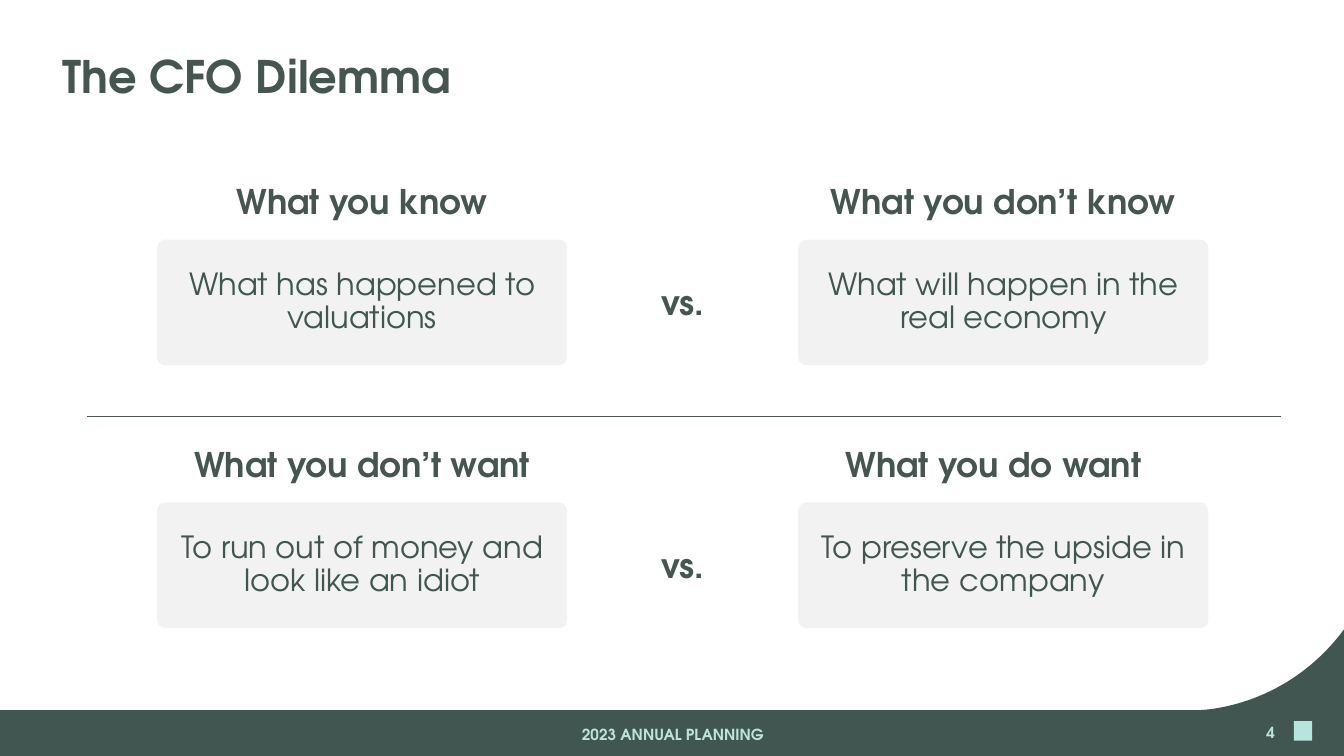
from dataclasses import dataclass

from lxml.etree import SubElement
from pptx import Presentation
from pptx.dml.color import RGBColor
from pptx.enum.shapes import MSO_CONNECTOR, MSO_SHAPE
from pptx.enum.text import MSO_ANCHOR, PP_ALIGN
from pptx.oxml.ns import qn
from pptx.shapes.autoshape import Shape
from pptx.slide import Slide
from pptx.util import Emu, Pt

PX = 9144  # EMU per px, 100 px to the inch
FONT = "TeX Gyre Adventor"
GREEN = RGBColor(0x41, 0x56, 0x51)
HEADING = RGBColor(0x45, 0x55, 0x50)
BODY = RGBColor(0x40, 0x56, 0x50)
MINT = RGBColor(0xBF, 0xE3, 0xDC)
MARK = RGBColor(0xB5, 0xE5, 0xDC)
GREY = RGBColor(0xF2, 0xF2, 0xF2)

SLIDE_W, SLIDE_H = 2199, 1237
CARD_W, CARD_H = 671, 206
COLUMNS = (257, 1306)
ROWS = (392, 822)
HEADING_W, HEADING_H, HEADING_RISE = 597, 77, 101
VS_LEFT, VS_W, VS_DROP = 1035, 165, 64
CURVE_STEPS = 32


@dataclass(frozen=True)
class TextStyle:
    size: float
    color: RGBColor
    bold: bool = True
    align: PP_ALIGN = PP_ALIGN.CENTER
    anchor: MSO_ANCHOR = MSO_ANCHOR.MIDDLE
    spacing: float = 1.0
    inset_left: int = 10
    inset_right: int = 10


@dataclass(frozen=True)
class Card:
    column: int
    row: int
    heading: str
    body: str
    heading_shift: int = 0


TITLE = TextStyle(52.8, HEADING, align=PP_ALIGN.LEFT, spacing=0.9, inset_left=0)
CARD_HEADING = TextStyle(40, HEADING, anchor=MSO_ANCHOR.TOP)
CARD_BODY = TextStyle(36, BODY, bold=False, spacing=0.9, inset_left=23, inset_right=23)
FOOTER = TextStyle(18, MINT)
PAGE_NUMBER = TextStyle(18, MINT, align=PP_ALIGN.RIGHT)

CARDS = (
    Card(0, 0, "What you know", "What has happened to valuations"),
    Card(1, 0, "What you don’t know", "What will happen in the real economy"),
    Card(0, 1, "What you don’t want", "To run out of money and look like an idiot"),
    Card(1, 1, "What you do want", "To preserve the upside in the company", -16),
)


def px(*values: int) -> list[Emu]:
    return [Emu(value * PX) for value in values]


def write(sp: Shape, text: str, style: TextStyle) -> None:
    tf = sp.text_frame
    tf.word_wrap = True
    tf.vertical_anchor = style.anchor
    tf.margin_left, tf.margin_right = px(style.inset_left, style.inset_right)
    tf.margin_top, tf.margin_bottom = px(5, 5)
    p = tf.paragraphs[0]
    p.text = text
    p.alignment = style.align
    p.line_spacing = style.spacing
    p.font.name = FONT
    p.font.size = Pt(style.size)
    p.font.bold = style.bold
    p.font.color.rgb = style.color


def add_text(s: Slide, left: int, top: int, width: int, height: int,
             text: str, style: TextStyle) -> None:
    write(s.shapes.add_textbox(*px(left, top, width, height)), text, style)


def paint(sp: Shape, color: RGBColor) -> None:
    sp.shadow.inherit = False
    sp.fill.solid()
    sp.fill.fore_color.rgb = color
    sp.line.fill.background()


def add_card(s: Slide, card: Card) -> None:
    left, top = COLUMNS[card.column], ROWS[card.row]
    sp = s.shapes.add_shape(MSO_SHAPE.ROUNDED_RECTANGLE, *px(left, top, CARD_W, CARD_H))
    sp.adjustments[0] = 0.066
    paint(sp, GREY)
    write(sp, card.body, CARD_BODY)
    heading_left = left + (CARD_W - HEADING_W) // 2 + card.heading_shift
    add_text(s, heading_left, top - HEADING_RISE, HEADING_W, HEADING_H,
             card.heading, CARD_HEADING)


def curve_point(t: float) -> tuple[int, int]:
    """Point in EMU on the cubic curve that lifts the band at the right edge."""
    weights = ((1 - t) ** 3, 3 * t * (1 - t) ** 2, 3 * t * t * (1 - t), t ** 3)
    controls = ((1959, 1162), (1959, 1162), (2100, 1163), (SLIDE_W, 1030))
    x, y = (sum(w * c for w, c in zip(weights, axis)) for axis in zip(*controls))
    return round(x * PX), round(y * PX)


def add_footer_band(s: Slide) -> None:
    builder = s.shapes.build_freeform(*px(SLIDE_W, SLIDE_H))
    outline = [px(0, SLIDE_H), px(0, 1162)]
    outline += [curve_point(i / CURVE_STEPS) for i in range(CURVE_STEPS + 1)]
    builder.add_line_segments(outline, close=True)
    paint(builder.convert_to_shape(), GREEN)
    mark = s.shapes.add_shape(MSO_SHAPE.RECTANGLE, *px(2117, 1180, 30, 32))
    paint(mark, MARK)


def add_divider(s: Slide) -> None:
    line = s.shapes.add_connector(MSO_CONNECTOR.STRAIGHT, *px(143, 681, 2096, 681))
    line.line.color.rgb = HEADING
    line.line.width = Pt(0.75)
    SubElement(line._element.spPr, qn("a:effectLst"))


def main() -> None:
    prs = Presentation()
    prs.slide_width, prs.slide_height = px(SLIDE_W, SLIDE_H)
    s = prs.slides.add_slide(prs.slide_layouts[6])
    add_footer_band(s)
    add_text(s, 102, 82, 1896, 94, "The CFO Dilemma", TITLE)
    add_text(s, 730, 1168, 742, 66, "2023 ANNUAL PLANNING", FOOTER)
    add_text(s, 1601, 1166, 495, 66, "4", PAGE_NUMBER)
    for card in CARDS:
        add_card(s, card)
    for top in ROWS:
        add_text(s, VS_LEFT, top + VS_DROP, VS_W, HEADING_H, "vs.", CARD_HEADING)
    add_divider(s)
    prs.save("out.pptx")


if __name__ == "__main__":
    main()
